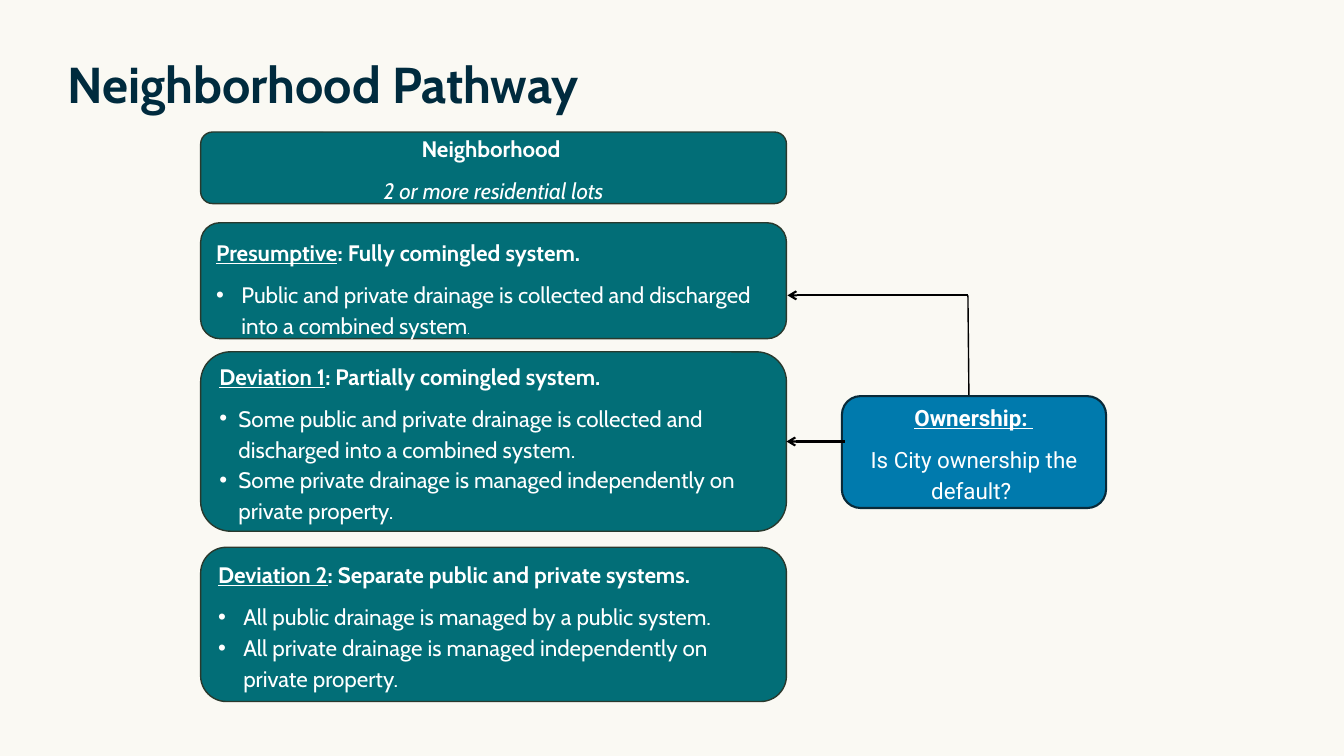
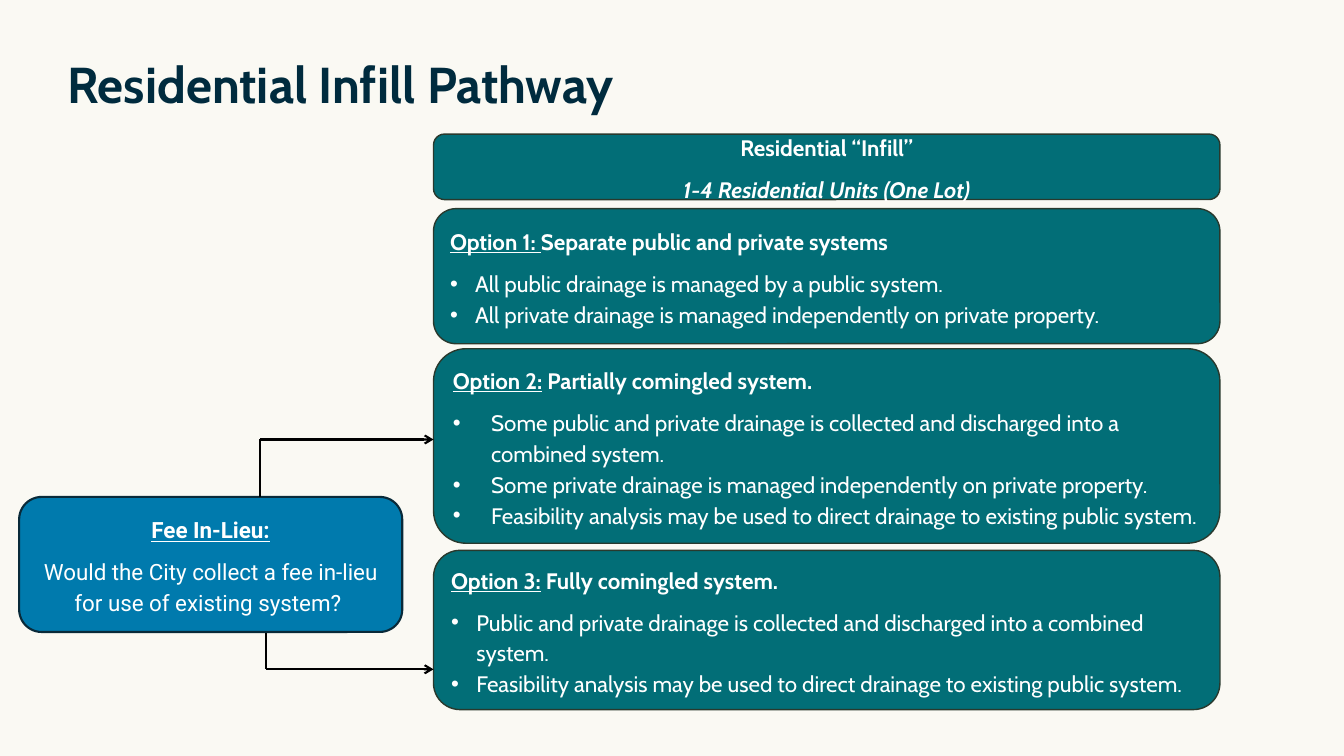
"""Build the two drainage pathway slides."""
from itertools import pairwise

from lxml.etree import SubElement
from pptx import Presentation
from pptx.dml.color import RGBColor
from pptx.enum.shapes import MSO_CONNECTOR as CONN, MSO_SHAPE as SHAPE
from pptx.enum.text import MSO_ANCHOR as ANCHOR, PP_ALIGN as ALIGN
from pptx.oxml.ns import qn
from pptx.util import Inches, Pt

CREAM = RGBColor(0xFA, 0xF9, 0xF3)
NAVY = RGBColor(0x00, 0x2B, 0x3E)
TEAL = RGBColor(0x02, 0x6E, 0x77)
TEAL_EDGE = RGBColor(0x29, 0x39, 0x2D)
BLUE = RGBColor(0x00, 0x7A, 0xAD)
BLUE_EDGE = RGBColor(0x09, 0x2A, 0x39)
WHITE = RGBColor(0xFF, 0xFF, 0xFF)
BLACK = RGBColor(0x00, 0x00, 0x00)

PANEL = dict(fill=TEAL, edge=TEAL_EDGE, weight=1, font="Cabin")
QUESTION = dict(fill=BLUE, edge=BLUE_EDGE, weight=1.5, font="Roboto")
TITLE_AT = (0.57, 0.4, 12.18, 0.78)
SIZE, SMALL = 16, 7.5

PUBLIC = "All public drainage is managed by a public system."
PRIVATE = "All private drainage is managed independently on private property."
SOME_BOTH = ("Some public and private drainage is collected and discharged "
             "into a combined system.")
SOME_PRIVATE = "Some private drainage is managed independently on private property."
COMBINED = "Public and private drainage is collected and discharged into a combined system"
FEASIBILITY = ("Feasibility analysis may be used to direct drainage "
               "to existing public system.")

SLIDES = [
    dict(
        title="Neighborhood Pathway",
        column=(1.99, 5.81),
        header=(1.31, 0.71, ("Neighborhood ", "b"), ("2 or more residential lots", "i")),
        panels=[
            dict(row=(2.21, 1.15), name="Presumptive", rest=": Fully comingled system.",
                 bullets=[[(COMBINED, ""), (".", "", SMALL)]], indent=0.25, drop=0.12),
            dict(row=(3.49, 1.78), name="Deviation 1", rest=": Partially comingled system.",
                 bullets=[[(SOME_BOTH, "")], [(SOME_PRIVATE, "")]], indent=0.19),
            dict(row=(5.43, 1.53), name="Deviation 2",
                 rest=": Separate public and private systems.",
                 bullets=[[(PUBLIC, "")], [(PRIVATE, "")]], indent=0.25),
        ],
        question=((8.35, 3.93, 2.62, 1.11), "Ownership: ", "Is City ownership the default? "),
        routes=[
            dict(points=[(9.61, 3.92), (9.6, 2.93), (7.81, 2.93)], stem=1),
            dict(points=[(8.38, 4.38), (7.8, 4.38)], panel=1, side=3),
        ],
    ),
    dict(
        title="Residential Infill Pathway",
        column=(4.3, 7.8),
        header=(1.33, 0.65, ("Residential “Infill”", "b"),
                ("1-4 Residential Units (One Lot)", "bi")),
        panels=[
            dict(row=(2.07, 1.34), name="Option 1: ", rest="Separate public and private systems",
                 bullets=[[(PUBLIC, "")], [(PRIVATE, "")]], indent=0.25),
            dict(row=(3.46, 1.93), name="Option 2:", rest=" Partially comingled system.",
                 bullets=[[(SOME_BOTH, "")], [(SOME_PRIVATE, "")], [(FEASIBILITY, "")]],
                 indent=0.38),
            dict(row=(5.46, 1.58), name="Option 3:", rest=" Fully comingled system.",
                 bullets=[[(COMBINED + ".", "")], [(FEASIBILITY, "")]], indent=0.25),
        ],
        question=((0.19, 4.93, 3.8, 1.34), "Fee In-Lieu:",
                  "Would the City collect a fee in-lieu for use of existing system? "),
        routes=[
            dict(points=[(2.64, 6.28), (2.64, 6.64), (4.3, 6.64)]),
            dict(points=[(2.58, 4.93), (2.58, 4.36), (4.3, 4.36)]),
        ],
    ),
]


def add_run(p, text, style, size, font, color):
    """Add one run; style letters are b, i and u."""
    r = p.add_run()
    r.text = text
    f = r.font
    f.name, f.size, f.color.rgb = font, Pt(size), color
    f.bold, f.italic, f.underline = "b" in style, "i" in style, "u" in style


def add_bullet(p, indent):
    """Give a paragraph a hanging round bullet."""
    pPr = p._p.get_or_add_pPr()
    pPr.set("marL", str(Inches(indent)))
    pPr.set("indent", str(-Inches(indent)))
    SubElement(pPr, qn("a:buFont")).set("typeface", "Arial")
    SubElement(pPr, qn("a:buChar")).set("char", "•")


def add_box(s, at, look, lines, align=ALIGN.CENTER, bullets=(), indent=0, drop=0):
    """Add a rounded box with heading lines and optional bullets."""
    sp = s.shapes.add_shape(SHAPE.ROUNDED_RECTANGLE, *map(Inches, at))
    sp.shadow.inherit = False
    sp.fill.solid()
    sp.fill.fore_color.rgb = look["fill"]
    sp.line.color.rgb = look["edge"]
    sp.line.width = Pt(look["weight"])
    tf = sp.text_frame
    tf.word_wrap = True
    tf.vertical_anchor = ANCHOR.MIDDLE
    tf.margin_top = Inches(0.05 + drop)
    for i, runs in enumerate([*lines, *bullets]):
        p = tf.add_paragraph() if i else tf.paragraphs[0]
        p.alignment = align
        p.line_spacing = 1.15
        if i < len(lines):
            p.space_after = Pt(8)
        else:
            add_bullet(p, indent)
        for text, style, *size in runs:
            add_run(p, text, style, size[0] if size else SIZE, look["font"], WHITE)
    return sp


def add_route(s, panels, points, stem=1.5, panel=None, side=None):
    """Draw straight legs through the points with an arrowhead at the end."""
    for start, end in pairwise(points):
        last = end == points[-1]
        c = s.shapes.add_connector(CONN.STRAIGHT, *map(Inches, start + end))
        c.line.color.rgb = BLACK
        c.line.width = Pt(1.5 if last else stem)
        if last:
            SubElement(c.line._get_or_add_ln(), qn("a:tailEnd")).set("type", "arrow")
            if panel is not None:
                c.end_connect(panels[panel], side)
        SubElement(c._element.spPr, qn("a:effectLst"))


def add_title(s, text):
    """Add the slide title."""
    tf = s.shapes.add_textbox(*map(Inches, TITLE_AT)).text_frame
    tf.word_wrap = True
    tf.vertical_anchor = ANCHOR.BOTTOM
    p = tf.paragraphs[0]
    p.line_spacing = 0.9
    add_run(p, text, "b", 36, "Cabin", NAVY)


def build_slide(prs, data):
    """Build one pathway slide."""
    s = prs.slides.add_slide(prs.slide_layouts[6])
    add_title(s, data["title"])
    left, width = data["column"]
    top, height, *lines = data["header"]
    add_box(s, (left, top, width, height), PANEL, [[line] for line in lines])
    panels = []
    for d in data["panels"]:
        top, height = d["row"]
        heading = [(d["name"], "bu"), (d["rest"], "b")]
        panels.append(add_box(s, (left, top, width, height), PANEL, [heading], ALIGN.LEFT,
                              d["bullets"], d["indent"], d.get("drop", 0)))
    at, name, question = data["question"]
    add_box(s, at, QUESTION, [[(name, "bu")], [(question, "")]])
    for route in data["routes"]:
        add_route(s, panels, **route)


def main():
    """Build and save the deck."""
    prs = Presentation()
    prs.slide_width, prs.slide_height = Inches(13.33), Inches(7.5)
    bg = prs.slide_master.background.fill
    bg.solid()
    bg.fore_color.rgb = CREAM
    for data in SLIDES:
        build_slide(prs, data)
    prs.save("out.pptx")


if __name__ == "__main__":
    main()
